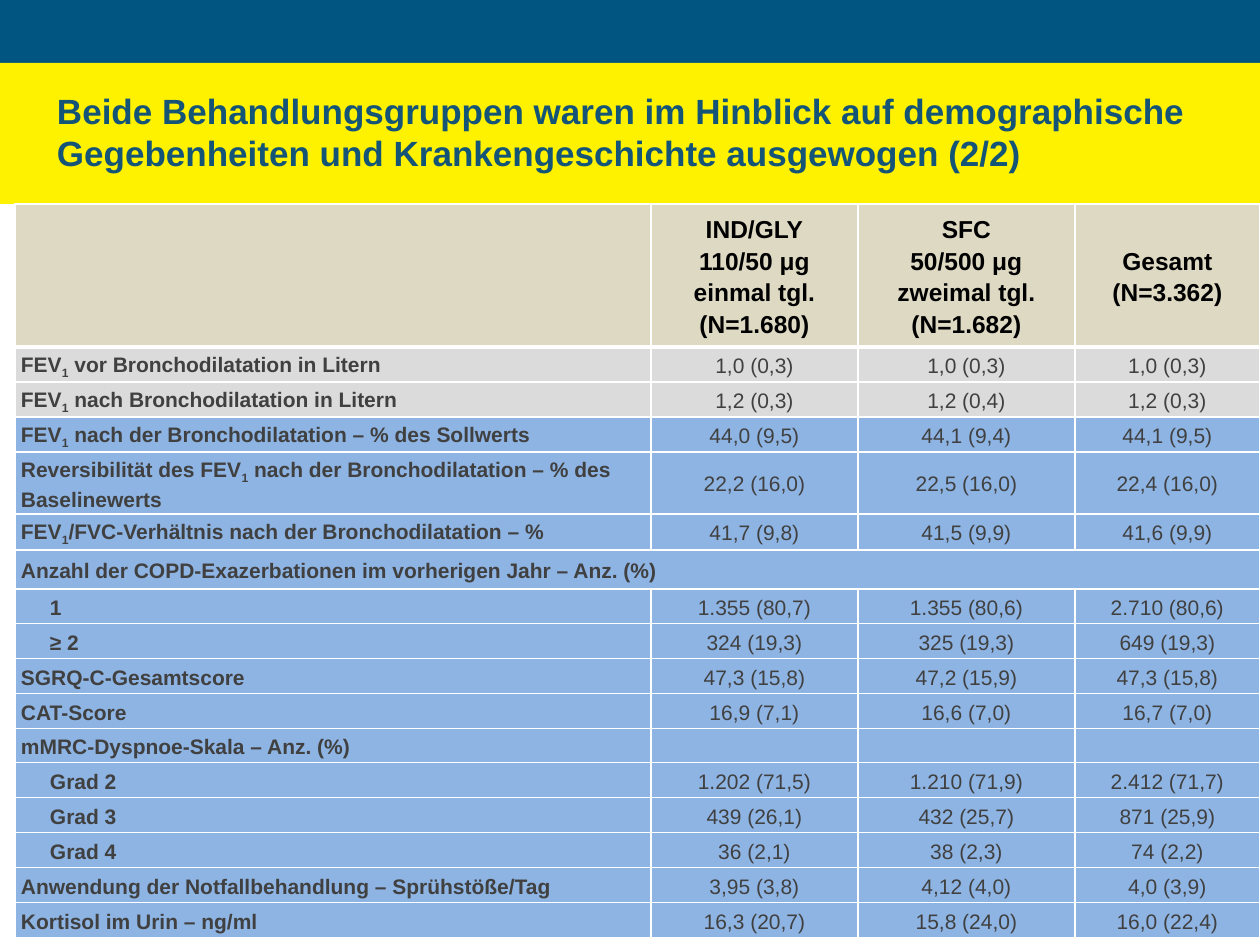
import pptx
import pptx.util
import pptx.dml.color
import pptx.enum.shapes
import pptx.enum.text
import pptx.oxml.ns
from lxml import etree

RGBColor = pptx.dml.color.RGBColor
Align = pptx.enum.text.PP_ALIGN
Anchor = pptx.enum.text.MSO_ANCHOR

NAVY = RGBColor(0x00, 0x55, 0x81)
YELLOW = RGBColor(0xFF, 0xF2, 0x00)
TITLE_BLUE = RGBColor(0x14, 0x54, 0x77)
BEIGE = RGBColor(0xDD, 0xD9, 0xC3)
GREY = RGBColor(0xDB, 0xDB, 0xDB)
BLUE = RGBColor(0x8E, 0xB4, 0xE3)
BLACK = RGBColor(0x00, 0x00, 0x00)
DARK_GREY = RGBColor(0x40, 0x40, 0x40)
WHITE = RGBColor(0xFF, 0xFF, 0xFF)

PX_PER_INCH = 126
CELL_MARGIN = 6
LEVEL_INDENT = 29
COLUMN_WIDTHS = [636, 207, 217, 185]
HEADER_HEIGHT = 143
ROW_HEIGHT = 35

TITLE = (
    "Beide Behandlungsgruppen waren im Hinblick auf demographische "
    "Gegebenheiten und Krankengeschichte ausgewogen (2/2)"
)
HEADERS = [
    "",
    "IND/GLY\n110/50 μg einmal tgl.\n(N=1.680)",
    "SFC\n50/500 μg zweimal tgl.\n(N=1.682)",
    "Gesamt\n(N=3.362)",
]
EXACERBATIONS = "Anzahl der COPD-Exazerbationen im vorherigen Jahr – Anz. (%)"
REVERSIBILITY = "Reversibilität des FEV|1| nach der Bronchodilatation – % des Baselinewerts"
FEV_RATIO = "FEV|1|/FVC-Verhältnis nach der Bronchodilatation – %"
DYSPNOEA = "mMRC-Dyspnoe-Skala – Anz. (%)"
ROWS = [
    ("FEV|1| vor Bronchodilatation in Litern", "1,0 (0,3)", "1,0 (0,3)", "1,0 (0,3)"),
    ("FEV|1| nach Bronchodilatation in Litern", "1,2 (0,3)", "1,2 (0,4)", "1,2 (0,3)"),
    ("FEV|1| nach der Bronchodilatation – % des Sollwerts", "44,0 (9,5)", "44,1 (9,4)", "44,1 (9,5)"),
    (REVERSIBILITY, "22,2 (16,0)", "22,5 (16,0)", "22,4 (16,0)"),
    (FEV_RATIO, "41,7 (9,8)", "41,5 (9,9)", "41,6 (9,9)"),
    (EXACERBATIONS, "", "", ""),
    ("1", "1.355 (80,7)", "1.355 (80,6)", "2.710 (80,6)"),
    ("≥ 2", "324 (19,3)", "325 (19,3)", "649 (19,3)"),
    ("SGRQ-C-Gesamtscore", "47,3 (15,8)", "47,2 (15,9)", "47,3 (15,8)"),
    ("CAT-Score", "16,9 (7,1)", "16,6 (7,0)", "16,7 (7,0)"),
    (DYSPNOEA, "", "", ""),
    ("Grad 2", "1.202 (71,5)", "1.210 (71,9)", "2.412 (71,7)"),
    ("Grad 3", "439 (26,1)", "432 (25,7)", "871 (25,9)"),
    ("Grad 4", "36 (2,1)", "38 (2,3)", "74 (2,2)"),
    ("Anwendung der Notfallbehandlung – Sprühstöße/Tag", "3,95 (3,8)", "4,12 (4,0)", "4,0 (3,9)"),
    ("Kortisol im Urin – ng/ml", "16,3 (20,7)", "15,8 (24,0)", "16,0 (22,4)"),
]
SPECIAL_HEIGHTS = {REVERSIBILITY: 62, FEV_RATIO: 36, EXACERBATIONS: 39, DYSPNOEA: 34}
INDENTED = {"1", "≥ 2", "Grad 2", "Grad 3", "Grad 4"}
GREY_ROWS = 2


def px(length):
    return pptx.util.Emu(round(length * 914400 / PX_PER_INCH))


def write_text(frame, text, size, color, bold=False, align=Align.LEFT, spacing=1.0):
    for index, line in enumerate(text.split("\n")):
        paragraph = frame.paragraphs[0] if index == 0 else frame.add_paragraph()
        paragraph.alignment = align
        paragraph.line_spacing = spacing
        if not line:
            end = etree.SubElement(paragraph._p, pptx.oxml.ns.qn("a:endParaRPr"))
            end.set("sz", str(size * 100))
            continue
        for position, part in enumerate(line.split("|")):
            run = paragraph.add_run()
            run.text = part
            run.font.name = "Arial"
            run.font.size = pptx.util.Pt(size)
            run.font.bold = bold
            run.font.color.rgb = color
            if position % 2:
                run.font._element.set("baseline", "-25000")


def set_borders(cell, bottom_width):
    properties = cell._tc.get_or_add_tcPr()
    widths = {"a:lnL": 1, "a:lnR": 1, "a:lnT": 1, "a:lnB": bottom_width}
    for index, (side, width) in enumerate(widths.items()):
        line = etree.Element(pptx.oxml.ns.qn(side), w=str(pptx.util.Pt(width)))
        fill = etree.SubElement(line, pptx.oxml.ns.qn("a:solidFill"))
        etree.SubElement(fill, pptx.oxml.ns.qn("a:srgbClr"), val=str(WHITE))
        properties.insert(index, line)


def format_cell(cell, text, fill, bottom_width=1, indent=0, **text_format):
    cell.margin_left = px(CELL_MARGIN + indent)
    cell.margin_right = px(CELL_MARGIN)
    cell.margin_top = cell.margin_bottom = 0
    cell.vertical_anchor = Anchor.MIDDLE
    cell.fill.solid()
    cell.fill.fore_color.rgb = fill
    set_borders(cell, bottom_width)
    write_text(cell.text_frame, text, spacing=1.15, **text_format)


def add_band(slide, left, top, width, height, color):
    band = slide.shapes.add_shape(
        pptx.enum.shapes.MSO_SHAPE.RECTANGLE, px(left), px(top), px(width), px(height)
    )
    band.shadow.inherit = False
    band.fill.solid()
    band.fill.fore_color.rgb = color
    band.line.fill.background()


def add_heading(slide, left, top, width, height):
    top_band = 63
    add_band(slide, left, top, width, top_band, NAVY)
    add_band(slide, left, top + top_band, width, height - top_band, YELLOW)
    title = slide.shapes.title
    title.left, title.top = px(left + 57), px(top + 73)
    title.width, title.height = px(width - 126), px(117)
    frame = title.text_frame
    frame.margin_left = frame.margin_right = frame.margin_top = frame.margin_bottom = 0
    frame.vertical_anchor = Anchor.MIDDLE
    frame.word_wrap = True
    frame.auto_size = pptx.enum.text.MSO_AUTO_SIZE.NONE
    write_text(frame, TITLE, size=20, color=TITLE_BLUE, bold=True)
    slide.shapes._spTree.append(title._element)


def add_baseline_table(slide, left, top):
    heights = [HEADER_HEIGHT] + [SPECIAL_HEIGHTS.get(row[0], ROW_HEIGHT) for row in ROWS]
    table = slide.shapes.add_table(
        len(heights), len(COLUMN_WIDTHS), px(left), px(top), px(sum(COLUMN_WIDTHS)), px(sum(heights))
    ).table
    for column, width in zip(table.columns, COLUMN_WIDTHS):
        column.width = px(width)
    for row, height in zip(table.rows, heights):
        row.height = px(height)
    for column, text in enumerate(HEADERS):
        format_cell(
            table.cell(0, column), text, BEIGE, bottom_width=3,
            size=14, color=BLACK, bold=True, align=Align.CENTER,
        )
    for row, values in enumerate(ROWS, start=1):
        fill = GREY if row <= GREY_ROWS else BLUE
        for column, text in enumerate(values):
            is_label = column == 0
            format_cell(
                table.cell(row, column), text, fill,
                indent=LEVEL_INDENT if is_label and text in INDENTED else 0,
                size=12, color=DARK_GREY, bold=is_label,
                align=Align.LEFT if is_label else Align.CENTER,
            )
        if values[0] == EXACERBATIONS:
            table.cell(row, 0).merge(table.cell(row, len(COLUMN_WIDTHS) - 1))


def main():
    presentation = pptx.Presentation()
    presentation.slide_width, presentation.slide_height = px(1260), px(945)
    slide = presentation.slides.add_slide(presentation.slide_layouts[5])
    add_heading(slide, 0, 0, 1260, 204)
    add_baseline_table(slide, 15, 204)
    presentation.save("out.pptx")


if __name__ == "__main__":
    main()
